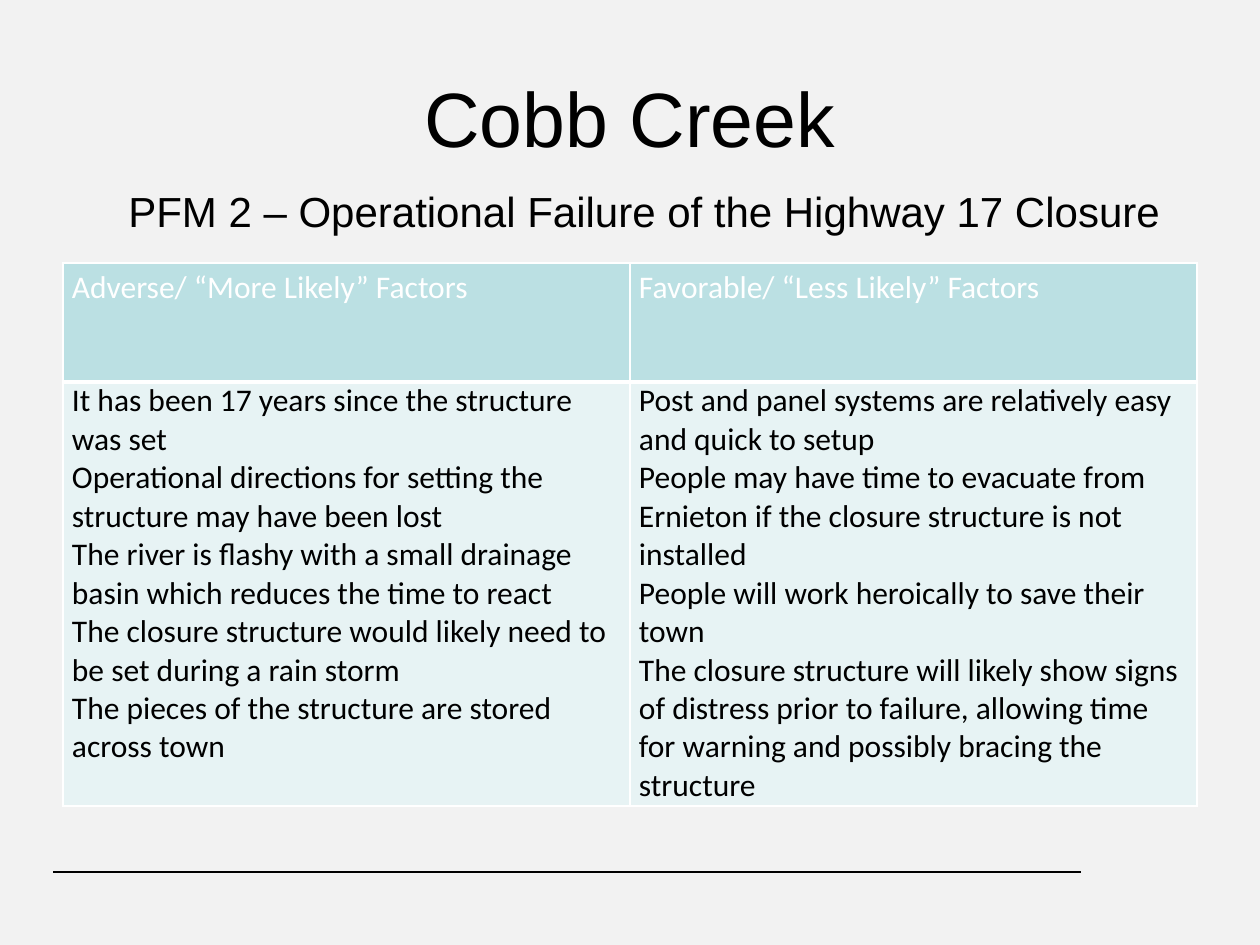
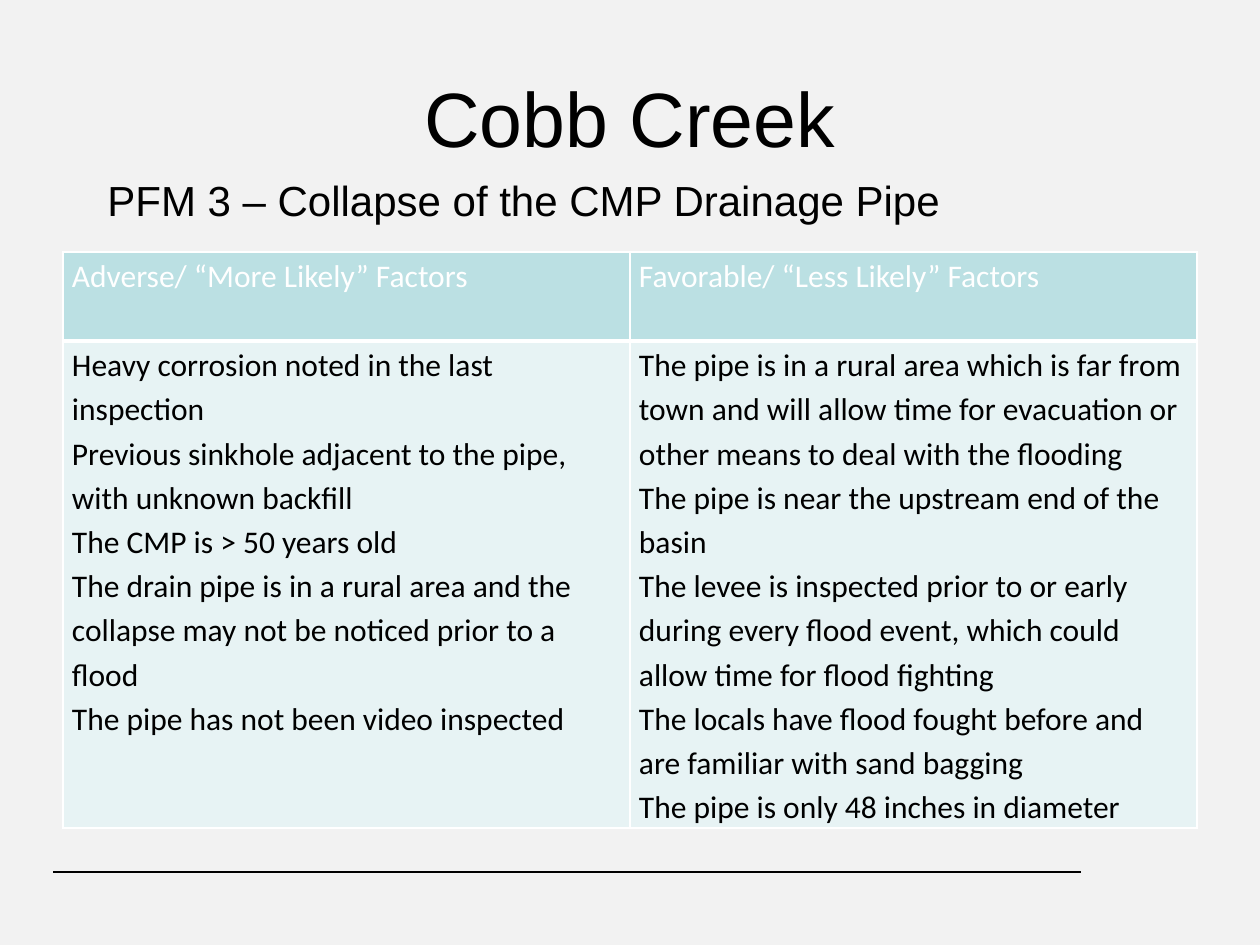
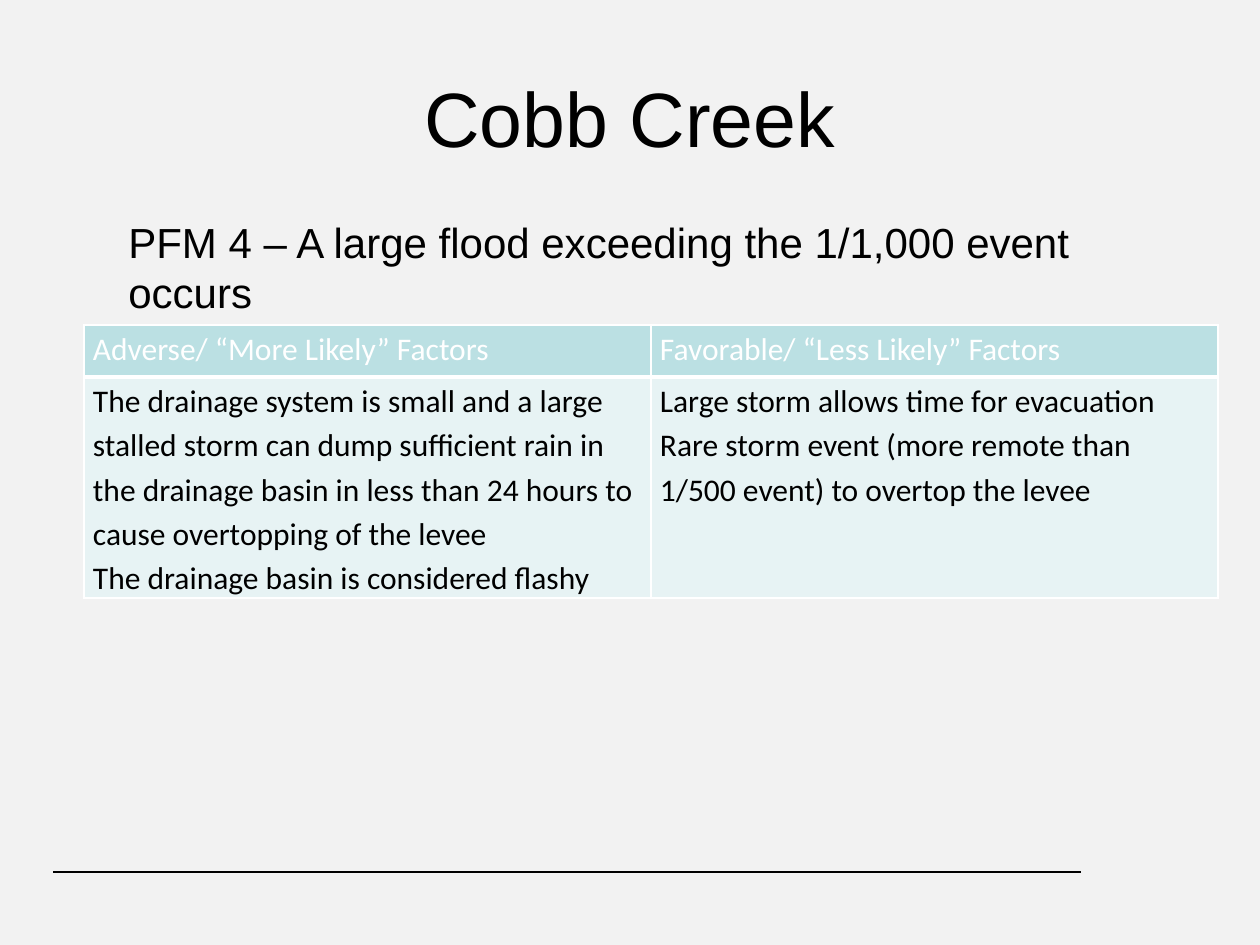
"""Build the Cobb Creek failure mode slides with their factor tables."""
from dataclasses import dataclass

from lxml import etree
from pptx import Presentation
from pptx.dml.color import RGBColor
from pptx.enum.shapes import MSO_CONNECTOR
from pptx.enum.text import MSO_ANCHOR, PP_ALIGN
from pptx.oxml.ns import qn
from pptx.util import Emu, Pt

CENTER, LEFT = PP_ALIGN.CENTER, PP_ALIGN.LEFT
TOP, MIDDLE = MSO_ANCHOR.TOP, MSO_ANCHOR.MIDDLE
STRAIGHT = MSO_CONNECTOR.STRAIGHT

TITLE = "Cobb Creek"
HEADERS = ("Adverse/ “More Likely” Factors", "Favorable/ “Less Likely” Factors")
SLIDES = [
    {
        "heading": "PFM 2 – Operational Failure of the Highway 17 Closure",
        "heading_box": (116, 179, 1081, 63),
        "table_at": (63, 263),
        "rows": (119, 424),
        "spacing": 1.0,
        "factors": (
            ["It has been 17 years since the structure was set",
             "Operational directions for setting the structure may have been lost",
             "The river is flashy with a small drainage basin which reduces the time to react",
             "The closure structure would likely need to be set during a rain storm",
             "The pieces of the structure are stored across town"],
            ["Post and panel systems are relatively easy and quick to setup",
             "People may have time to evacuate from Ernieton if the closure structure is not installed",
             "People will work heroically to save their town",
             "The closure structure will likely show signs of distress prior to failure, "
             "allowing time for warning and possibly bracing the structure"],
        ),
    },
    {
        "heading": "PFM 3 – Collapse of the CMP Drainage Pipe",
        "heading_box": (95, 168, 1029, 63),
        "table_at": (63, 252),
        "rows": (89, 487),
        "spacing": 1.15,
        "factors": (
            ["Heavy corrosion noted in the last inspection",
             "Previous sinkhole adjacent to the pipe, with unknown backfill",
             "The CMP is > 50 years old",
             "The drain pipe is in a rural area and the collapse may not be noticed prior to a flood",
             "The pipe has not been video inspected"],
            ["The pipe is in a rural area which is far from town and will allow time for "
             "evacuation or other means to deal with the flooding",
             "The pipe is near the upstream end of the basin",
             "The levee is inspected prior to or early during every flood event, "
             "which could allow time for flood fighting",
             "The locals have flood fought before and are familiar with sand bagging",
             "The pipe is only 48 inches in diameter"],
        ),
    },
    {
        "heading": "PFM 4 – A large flood exceeding the 1/1,000 event occurs",
        "heading_box": (116, 210, 1081, 63),
        "table_at": (84, 325),
        "rows": (52, 221),
        "spacing": 1.15,
        "factors": (
            ["The drainage system is small and a large stalled storm can dump sufficient rain in "
             "the drainage basin in less than 24 hours to cause overtopping of the levee",
             "The drainage basin is considered flashy"],
            ["Large storm allows time for evacuation",
             "Rare storm event (more remote than 1/500 event) to overtop the levee"],
        ),
    },
]

SLIDE_SIZE = (1260, 945)
TITLE_BOX = (63, 38, 1134, 157)
FOOTER_LINE = (1081, 872, 53, 872)
COLUMN_WIDTH = 567
CELL_INSET = 9


@dataclass(frozen=True)
class Theme:
    background: str = "F2F2F2"
    text: str = "000000"
    header_text: str = "FFFFFF"
    header_fill: str = "BBE0E3"
    body_fill: str = "E7F3F4"
    border: str = "FFFFFF"
    heading_font: str = "Arial"
    table_font: str = "Calibri"
    title_size: int = 44
    heading_size: int = 24
    table_size: int = 18
    border_width: int = 1
    header_rule: int = 3
    footer_width: float = 0.75


THEME = Theme()


def px(n):
    return Emu(round(n * 914400 / 126))


def box(*lengths):
    return [px(n) for n in lengths]


def rgb(value):
    return RGBColor.from_string(value)


def write(tf, lines, font, size, color, align=LEFT, spacing=1.0):
    for i, line in enumerate(lines):
        p = tf.paragraphs[0] if i == 0 else tf.add_paragraph()
        p.text = line
        p.alignment = align
        p.line_spacing = spacing
        p.font.name = font
        p.font.size = Pt(size)
        p.font.color.rgb = rgb(color)


def add_text(s, place, text, size, align=LEFT, anchor=TOP):
    tf = s.shapes.add_textbox(*box(*place)).text_frame
    tf.word_wrap = True
    tf.vertical_anchor = anchor
    write(tf, [text], THEME.heading_font, size, THEME.text, align)


def add_footer_line(s):
    line = s.shapes.add_connector(STRAIGHT, *box(*FOOTER_LINE))
    line.line.color.rgb = rgb(THEME.text)
    line.line.width = Pt(THEME.footer_width)
    etree.SubElement(line._element.spPr, qn("a:effectLst"))


def set_borders(cell, bottom):
    tc_pr = cell._tc.get_or_add_tcPr()
    widths = {side: THEME.border_width for side in "LRT"} | {"B": bottom}
    for side, width in widths.items():
        ln = etree.SubElement(tc_pr, qn(f"a:ln{side}"), w=str(Pt(width)))
        fill = etree.SubElement(ln, qn("a:solidFill"))
        etree.SubElement(fill, qn("a:srgbClr"), val=THEME.border)


def fill_cell(cell, lines, fill, color, spacing, bottom):
    cell.margin_left = cell.margin_right = px(CELL_INSET)
    cell.margin_top = cell.margin_bottom = 0
    set_borders(cell, bottom)
    cell.fill.solid()
    cell.fill.fore_color.rgb = rgb(fill)
    write(cell.text_frame, lines, THEME.table_font, THEME.table_size, color, spacing=spacing)


def add_factor_table(s, data):
    size = (COLUMN_WIDTH * len(HEADERS), sum(data["rows"]))
    table = s.shapes.add_table(2, len(HEADERS), *box(*data["table_at"], *size)).table
    table.first_row = table.horz_banding = False
    for row, height in zip(table.rows, data["rows"]):
        row.height = px(height)
    for i, (header, factors) in enumerate(zip(HEADERS, data["factors"])):
        table.columns[i].width = px(COLUMN_WIDTH)
        fill_cell(table.cell(0, i), [header], THEME.header_fill, THEME.header_text,
                  1.15, THEME.header_rule)
        fill_cell(table.cell(1, i), factors, THEME.body_fill, THEME.text,
                  data["spacing"], THEME.border_width)


def main():
    prs = Presentation()
    prs.slide_width, prs.slide_height = box(*SLIDE_SIZE)
    background = prs.slide_master.background.fill
    background.solid()
    background.fore_color.rgb = rgb(THEME.background)
    for data in SLIDES:
        s = prs.slides.add_slide(prs.slide_layouts[6])
        add_footer_line(s)
        add_text(s, TITLE_BOX, TITLE, THEME.title_size, CENTER, MIDDLE)
        add_factor_table(s, data)
        add_text(s, data["heading_box"], data["heading"], THEME.heading_size)
    prs.save("out.pptx")


if __name__ == "__main__":
    main()
